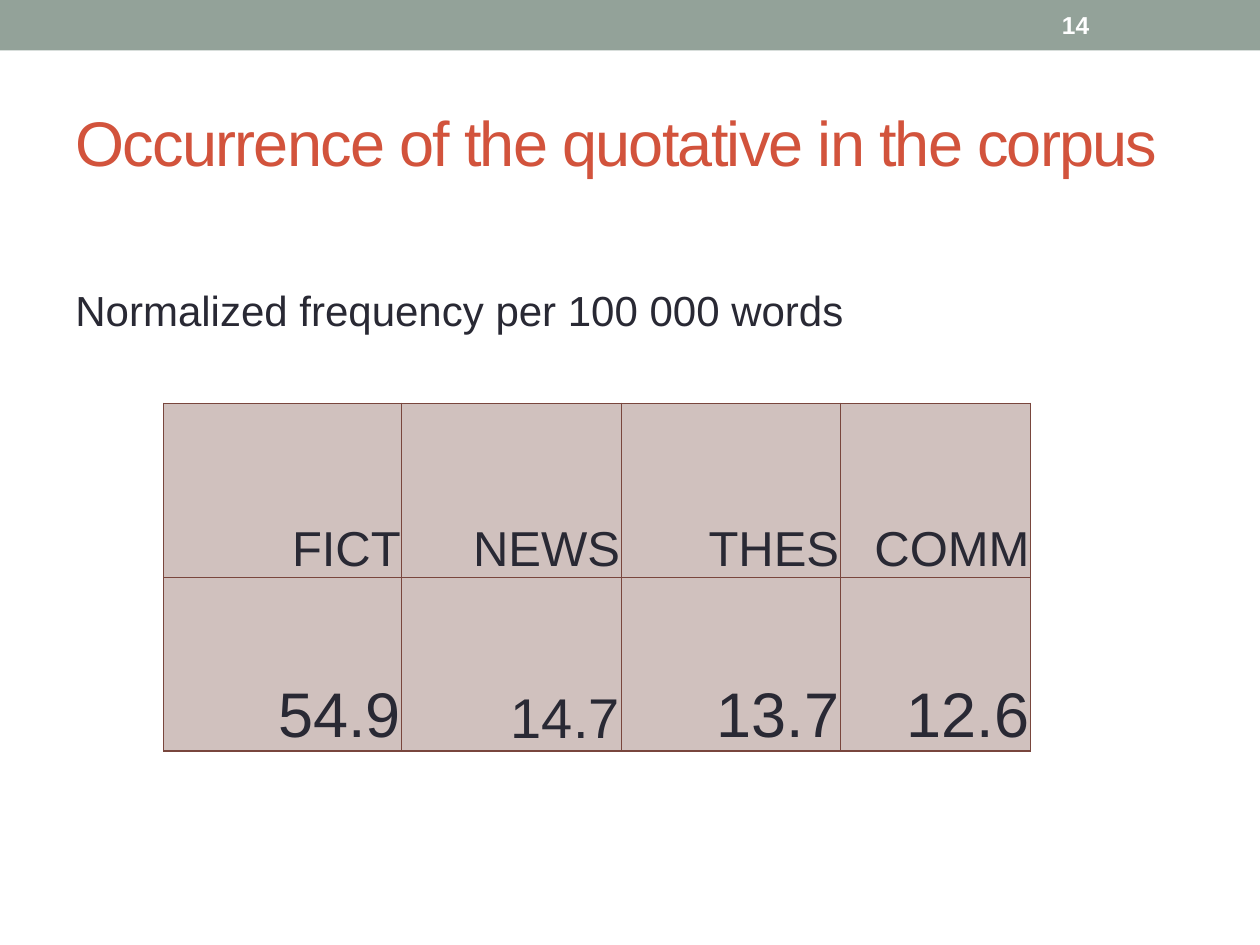
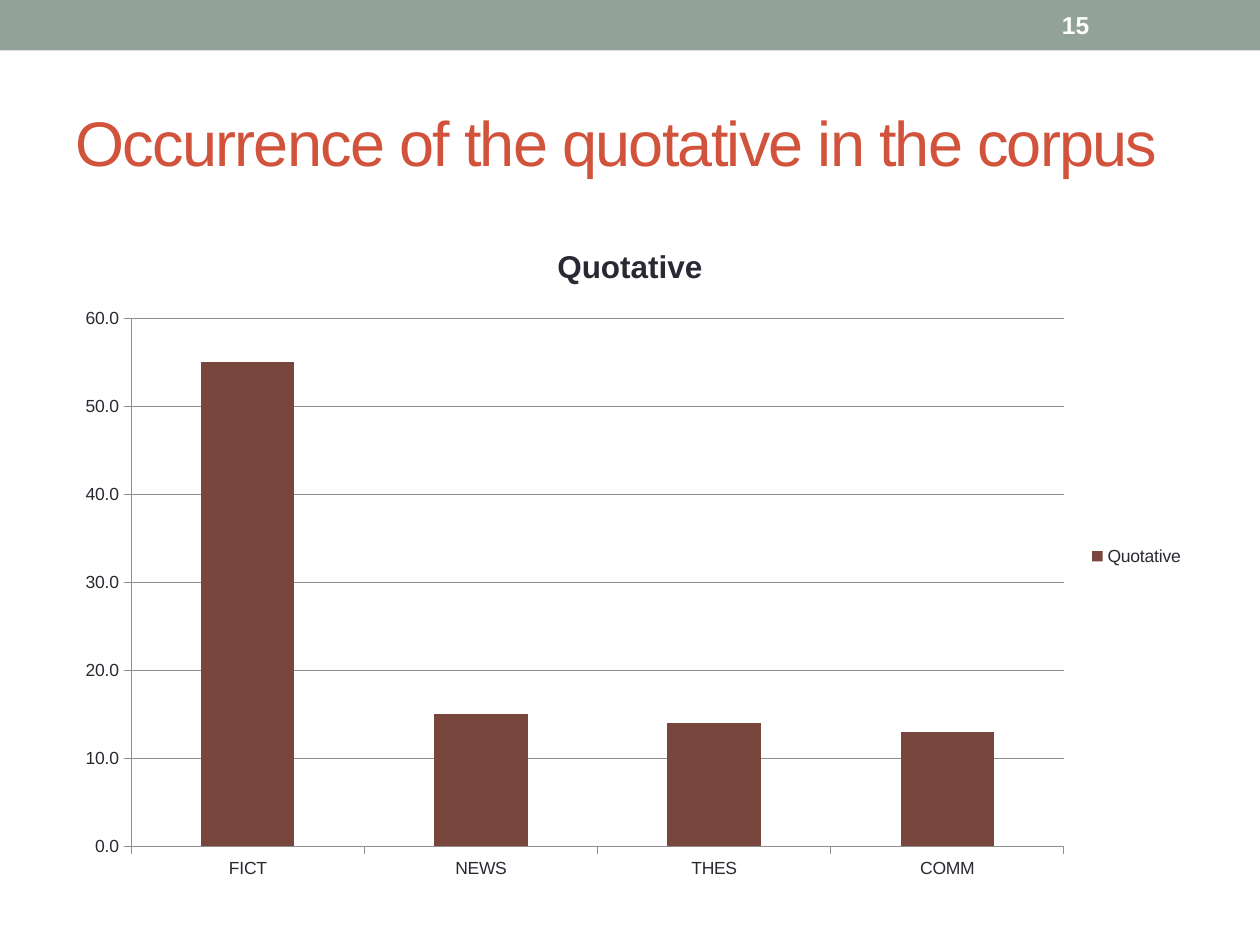
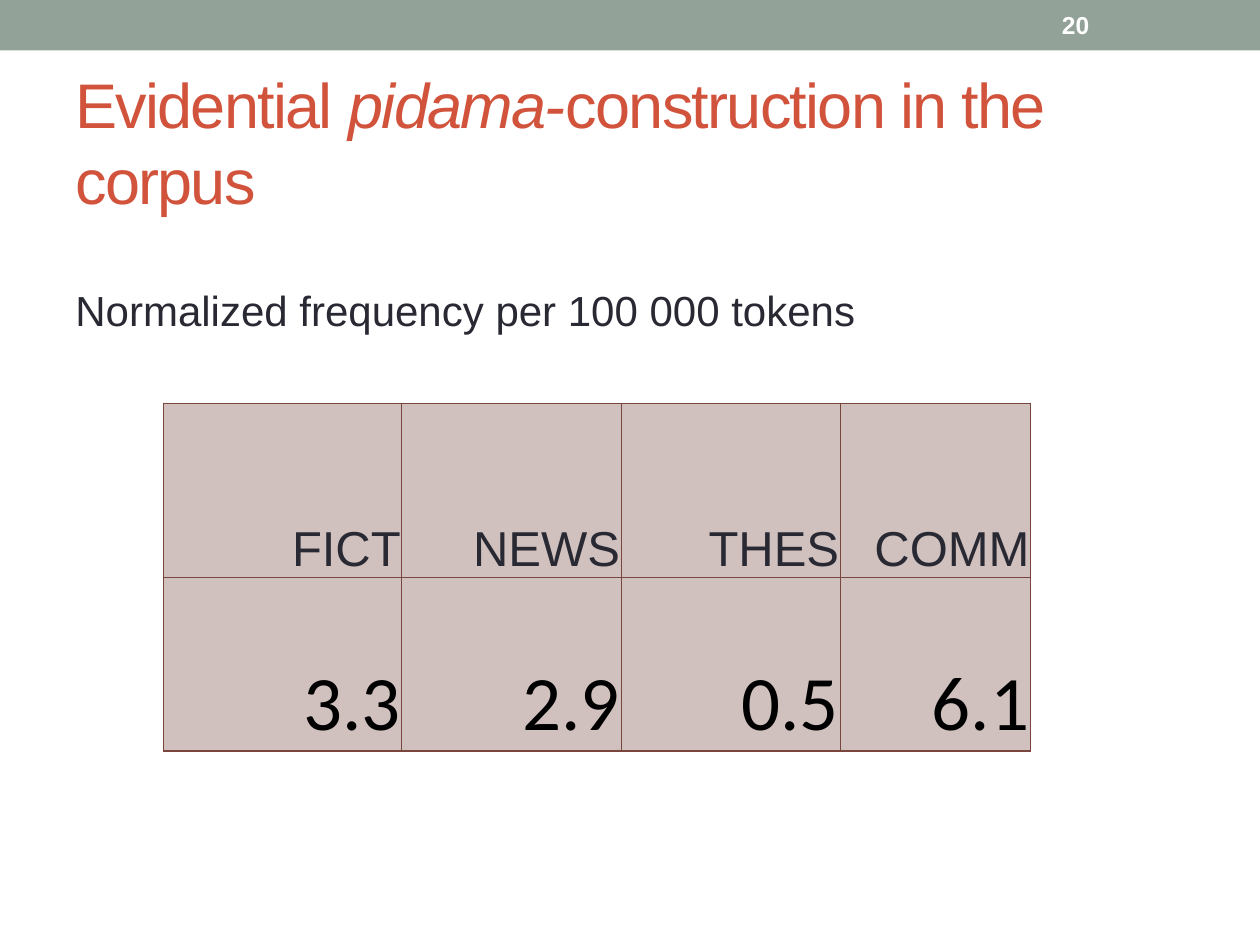
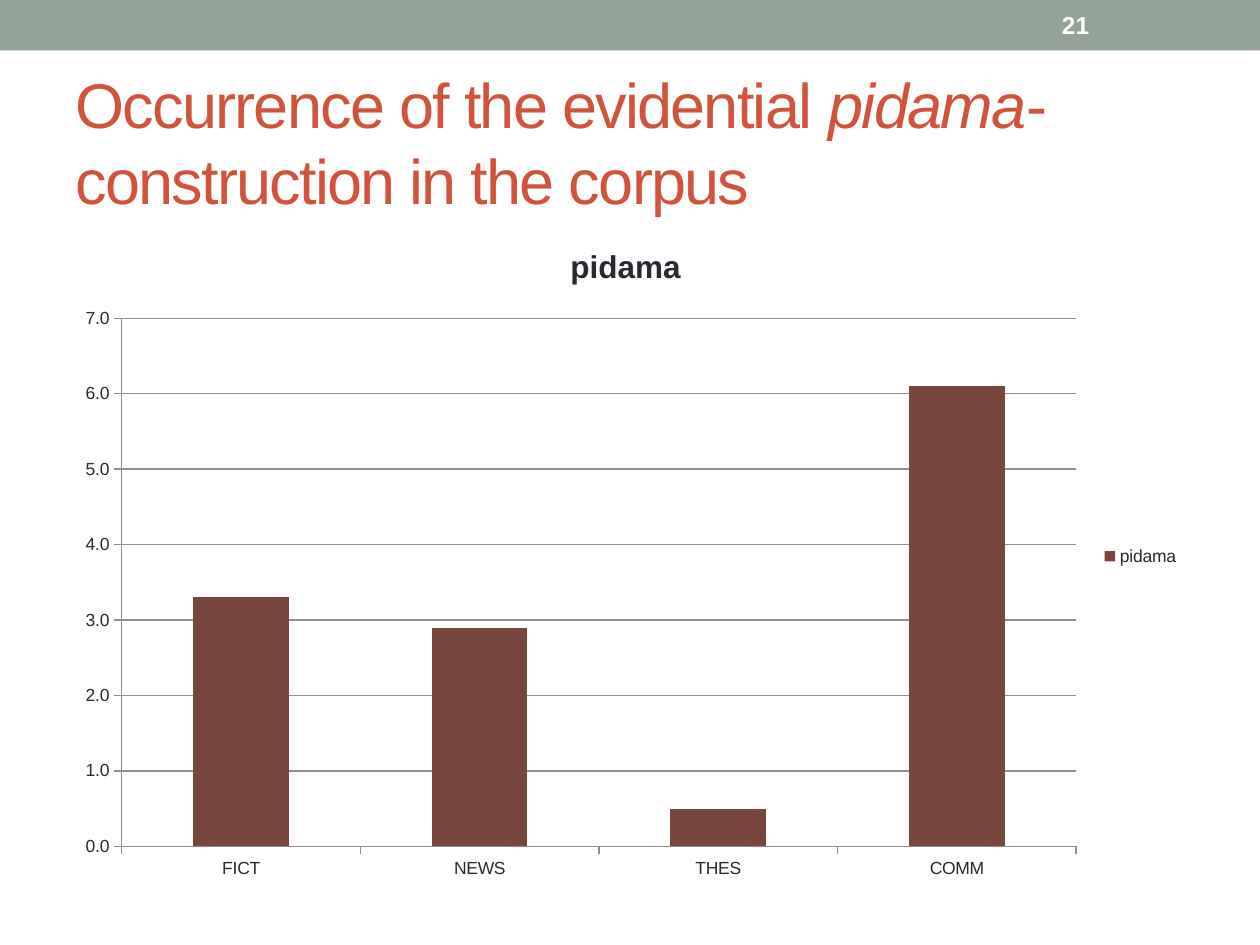
"""Build four slides on how often two constructions occur in a corpus."""
from lxml import etree
from pptx import Presentation
from pptx.chart.data import CategoryChartData
from pptx.dml.color import RGBColor
from pptx.enum.chart import XL_CHART_TYPE, XL_LEGEND_POSITION, XL_TICK_MARK
from pptx.enum.shapes import MSO_SHAPE
from pptx.enum.text import MSO_ANCHOR, PP_ALIGN
from pptx.oxml.ns import qn
from pptx.util import Inches, Pt

COLUMN = XL_CHART_TYPE.COLUMN_CLUSTERED
LEGEND_RIGHT = XL_LEGEND_POSITION.RIGHT
TICK_OUT = XL_TICK_MARK.OUTSIDE
RECT = MSO_SHAPE.RECTANGLE
TOP, MIDDLE, BOTTOM = MSO_ANCHOR.TOP, MSO_ANCHOR.MIDDLE, MSO_ANCHOR.BOTTOM
RIGHT = PP_ALIGN.RIGHT


class Theme:
    font = "Arial"
    number_font = "Calibri"
    band = RGBColor.from_string("93A299")
    title = RGBColor.from_string("D2533C")
    ink = RGBColor.from_string("292934")
    accent = RGBColor.from_string("79463D")
    cell = RGBColor.from_string("D0C1BE")
    axis = RGBColor.from_string("8E8E90")
    white = RGBColor.from_string("FFFFFF")
    black = RGBColor.from_string("000000")
    title_size, body_size, page_size = 36, 24, 14
    head_size, chart_title_size, chart_size = 28, 18, 10
    line = Pt(0.75)


def set_font(font, size, color, name=Theme.font, bold=False):
    font.size, font.name, font.bold = Pt(size), name, bold
    font.color.rgb = color


def add_text(s, box, runs, size, color, anchor=MIDDLE, bold=False, spacing=0, top=0.05):
    tf = s.shapes.add_textbox(*map(Inches, box)).text_frame
    tf.word_wrap = True
    tf.vertical_anchor = anchor
    tf.margin_top = Inches(top)
    for text, italic in runs:
        r = tf.paragraphs[0].add_run()
        r.text = text
        set_font(r.font, size, color, bold=bold)
        r.font.italic = italic
        if spacing:
            r.font._element.set("spc", str(spacing))


BODY = (0.5, 1.75, 9, 5.33)
CATEGORIES = ["FICT", "NEWS", "THES", "COMM"]
COLUMN_WIDTHS = [1.89, 1.74, 1.74, 1.51]
ROW_HEIGHT = 1.38

quotative_title = [("Occurrence of the quotative in the corpus", False)]
quotative = {
    "name": "Quotative",
    "unit": "words",
    "cells": ["54.9", "14.7", "13.7", "12.6"],
    "values": [55, 15, 14, 13],
    "style": ([36, 32, 36, 36], Theme.ink, Theme.font),
}
pidama = {
    "name": "pidama ",
    "unit": "tokens",
    "cells": ["3.3", "2.9", "0.5", "6.1"],
    "values": [3.3, 2.9, 0.5, 6.1],
    "style": ([44] * 4, Theme.black, Theme.number_font),
}
slides = [
    (14, quotative_title, "table", quotative),
    (15, quotative_title, "chart", quotative),
    (20, [("Evidential ", False), ("pidama-", True),
          ("construction in the corpus", False)], "table", pidama),
    (21, [("Occurrence of the evidential ", False), ("pidama", True),
          ("-construction in the corpus", False)], "chart", pidama),
]

prs = Presentation()
prs.slide_width, prs.slide_height = Inches(10), Inches(7.5)

for page, title, kind, data in slides:
    s = prs.slides.add_slide(prs.slide_layouts[6])
    sp = s.shapes.add_shape(RECT, 0, 0, prs.slide_width, Inches(0.4))
    sp.shadow.inherit = False
    sp.fill.solid()
    sp.fill.fore_color.rgb = Theme.band
    sp.line.fill.background()
    add_text(s, (0.5, 0.58, 9, 1.08), title, Theme.title_size, Theme.title, spacing=-100)
    add_text(s, (8.33, 0.02, 1.17, 0.36), [(str(page), False)],
             Theme.page_size, Theme.white, bold=True)

    if kind == "table":
        add_text(s, BODY, [(f"Normalized frequency per 100 000 {data['unit']}", False)],
                 Theme.body_size, Theme.ink, anchor=TOP, top=0.51)
        table = s.shapes.add_table(2, 4, Inches(1.3), Inches(3.2),
                                   Inches(sum(COLUMN_WIDTHS)), Inches(2 * ROW_HEIGHT)).table
        for column, width in zip(table.columns, COLUMN_WIDTHS):
            column.width = Inches(width)
        rows = [
            (CATEGORIES, [Theme.head_size] * 4, Theme.ink, Theme.font),
            (data["cells"], *data["style"]),
        ]
        for i, (texts, sizes, color, name) in enumerate(rows):
            table.rows[i].height = Inches(ROW_HEIGHT)
            for j, (text, size) in enumerate(zip(texts, sizes)):
                cell = table.cell(i, j)
                cell.vertical_anchor = BOTTOM
                cell.margin_left = cell.margin_right = cell.margin_top = Inches(0.01)
                cell.margin_bottom = 0
                p = cell.text_frame.paragraphs[0]
                p.alignment = RIGHT
                r = p.add_run()
                r.text = text
                set_font(r.font, size, color, name)
                tc_pr = cell._tc.get_or_add_tcPr()
                for side in ("a:lnL", "a:lnR", "a:lnT", "a:lnB"):
                    ln = etree.SubElement(tc_pr, qn(side), w=str(Theme.line))
                    fill = etree.SubElement(ln, qn("a:solidFill"))
                    etree.SubElement(fill, qn("a:srgbClr"), val=str(Theme.accent))
                cell.fill.solid()
                cell.fill.fore_color.rgb = Theme.cell
    else:
        chart_data = CategoryChartData(number_format="0.0")
        chart_data.categories = CATEGORIES
        chart_data.add_series(data["name"], data["values"])
        chart = s.shapes.add_chart(COLUMN, *map(Inches, BODY), chart_data).chart
        set_font(chart.font, Theme.chart_size, Theme.ink)
        chart.has_title = True
        r = chart.chart_title.text_frame.paragraphs[0].add_run()
        r.text = data["name"]
        set_font(r.font, Theme.chart_title_size, Theme.ink, bold=True)
        chart.chart_title.include_in_layout = False
        chart.has_legend = True
        chart.legend.position = LEGEND_RIGHT
        chart.legend.include_in_layout = False
        set_font(chart.legend.font, Theme.chart_size, Theme.ink)
        plot = chart.plots[0]
        plot.gap_width = 150
        plot.vary_by_categories = False
        bars = plot.series[0].format.fill
        bars.solid()
        bars.fore_color.rgb = Theme.accent
        axes = [chart.category_axis, chart.value_axis]
        for axis in axes:
            axis.major_tick_mark = TICK_OUT
            set_font(axis.tick_labels.font, Theme.chart_size, Theme.ink)
        chart.value_axis.tick_labels.number_format = "0.0"
        chart.value_axis.tick_labels.number_format_is_linked = False
        chart.value_axis.has_major_gridlines = True
        for part in [*axes, chart.value_axis.major_gridlines]:
            part.format.line.color.rgb = Theme.axis
            part.format.line.width = Theme.line

prs.save("out.pptx")
